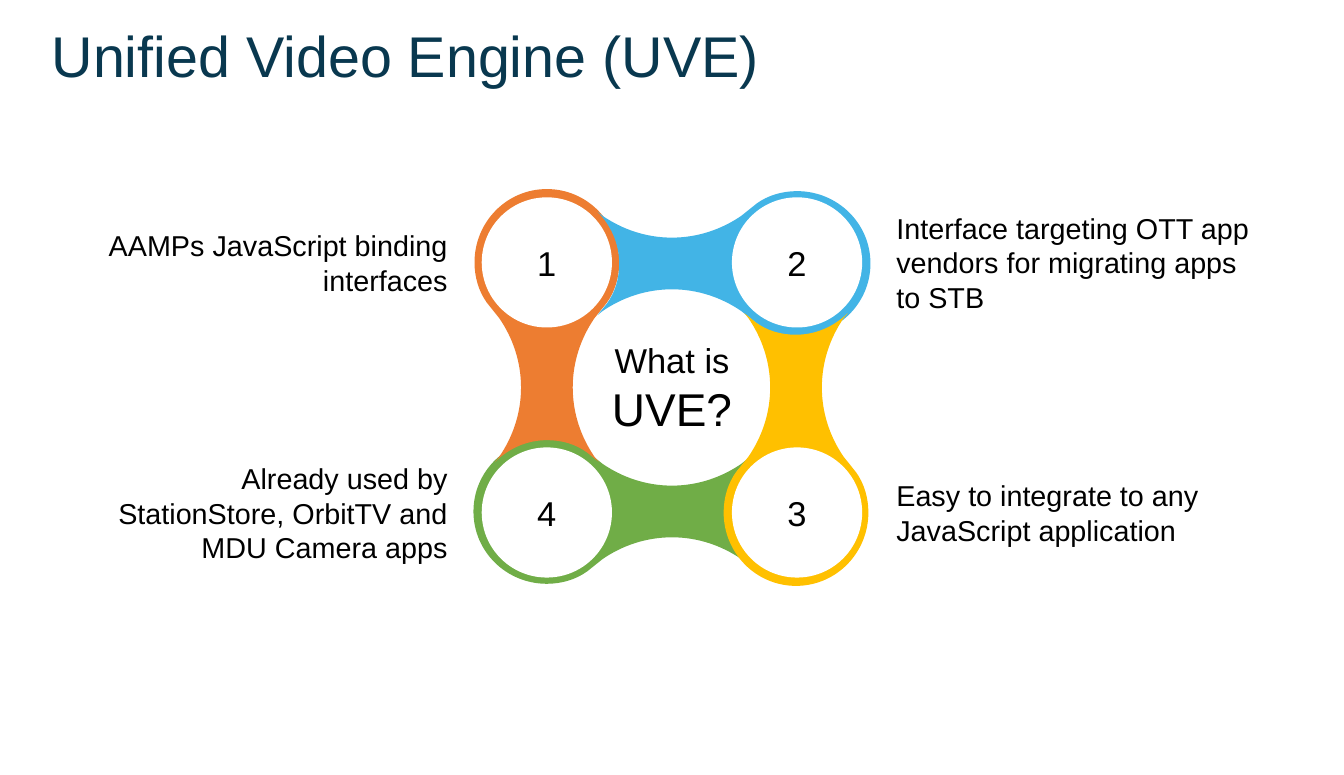
from lxml import etree
from pptx import Presentation
from pptx.dml.color import RGBColor
from pptx.enum.shapes import MSO_SHAPE as SHAPE
from pptx.enum.text import MSO_ANCHOR as ANCHOR, MSO_AUTO_SIZE as FIT, PP_ALIGN as ALIGN
from pptx.oxml.ns import qn
from pptx.util import Pt

# Content
TITLE = "Unified Video Engine (UVE)"
QUESTION = [("What is", 24), ("UVE?", 32)]
# number, link colour, horizontal and vertical side of the hub, caption lines, caption height
NODES = [
    ("4", "green", -1, 1, ["Already used by StationStore, OrbitTV and MDU Camera apps"], 101),
    ("1", "orange", -1, -1, ["AAMPs JavaScript binding interfaces"], 67),
    ("2", "blue", 1, -1, ["Interface targeting OTT app vendors for migrating apps", "to STB"], 101),
    ("3", "yellow", 1, 1, ["Easy to integrate to any JavaScript application"], 67),
]
COLORS = {
    "green": "70AD47", "orange": "ED7D31", "blue": "42B4E6", "yellow": "FFC000",
    "white": "FFFFFF", "black": "000000", "title": "09384F",
}

# Layout in px, 100 to the inch
PX = 9144
WIDTH, HEIGHT = 1300, 750
CENTER = (650, 375)
NODE_OFFSET, DISC = 121, 126
CAPTION_GAP, CAPTION_WIDTH = 217, 359
LINK_SHIFT = {"orange": -1}

# One link around the hub centre: one point is a corner, three points a Bezier curve
LINK_START = (-121, 50)
LINK = [
    [(-107, 50), (-93, 54), (-82, 62)], [(-72, 70)], [(-67, 74)],
    [(-48, 87), (-25, 95), (0, 95)], [(25, 95), (48, 87), (67, 74)], [(72, 70)], [(63, 81)],
    [(55, 92), (51, 105), (51, 120)], [(51, 139), (59, 157), (72, 170)], [(67, 166)],
    [(48, 153), (25, 145), (0, 145)], [(-25, 145), (-48, 153), (-67, 166)],
    [(-72, 170)], [(-82, 178)],
    [(-93, 186), (-107, 190), (-121, 190)], [(-160, 190), (-192, 159), (-192, 120)],
    [(-192, 81), (-160, 50), (-121, 50)],
]


def color(name):
    return RGBColor.from_string(COLORS[name])


def paint(shape, fill):
    shape.shadow.inherit = False
    shape.fill.solid()
    shape.fill.fore_color.rgb = color(fill)
    shape.line.fill.background()


def write(shape, lines, ink="black", align=ALIGN.LEFT, insets=(0, 0, 0, 0), fit=FIT.NONE):
    frame = shape.text_frame
    settings = {"word_wrap": True, "auto_size": fit, "vertical_anchor": ANCHOR.MIDDLE}
    sides = ("margin_left", "margin_top", "margin_right", "margin_bottom")
    settings.update(zip(sides, (inset * PX for inset in insets)))
    for name, value in settings.items():
        setattr(frame, name, value)
    para = frame.paragraphs[0]
    para.alignment = align
    for index, (text, size) in enumerate(lines):
        if index:
            para.add_line_break()
        span = para.add_run()
        span.text = text
        span.font.name, span.font.size = "Arial", Pt(size)
        span.font.color.rgb = color(ink)
    return para


def place(x, y, width, height):
    return [round(value * PX) for value in (x, y, width, height)]


def centered(x, y, width, height):
    return place(x - width / 2, y - height / 2, width, height)


def add_link(shapes, turns, shift):
    points = [LINK_START] + [point for step in LINK for point in step]
    for _ in range(turns):
        points = [(-y, x) for x, y in points]
    points = [(CENTER[0] + shift + x, CENTER[1] + y) for x, y in points]
    builder = shapes.build_freeform(*points[0], scale=PX)
    builder.add_line_segments(points[1:], close=True)
    link = builder.convert_to_shape()
    # Join each run of three points into one curve
    segments = iter(list(link.element.iter(qn("a:lnTo"))))
    for step in LINK:
        group = [next(segments) for _ in step]
        if len(group) == 3:
            curve = etree.Element(qn("a:cubicBezTo"))
            group[0].addprevious(curve)
            for segment in group:
                curve.append(segment[0])
                segment.getparent().remove(segment)
    return link


deck = Presentation()
deck.slide_width, deck.slide_height = WIDTH * PX, HEIGHT * PX
page = deck.slides.add_slide(deck.slide_layouts[6])
shapes = page.shapes

# Title
title = shapes.add_textbox(*place(0, 0, WIDTH, 100))
write(title, [(TITLE, 40)], ink="title", insets=(50, 15, 0, 0)).line_spacing = 0.9

# Links, each a quarter turn on from the one before
for turns, (_, link_color, *_) in enumerate(NODES):
    paint(add_link(shapes, turns, LINK_SHIFT.get(link_color, 0)), link_color)

# Numbered discs and their captions
for number, _, across, down, caption, height in NODES:
    y = CENTER[1] + down * NODE_OFFSET
    disc = shapes.add_shape(
        SHAPE.OVAL, *centered(CENTER[0] + across * NODE_OFFSET, y, DISC, DISC))
    paint(disc, "white")
    write(disc, [(number, 24)], align=ALIGN.CENTER, insets=(10, 5, 10, 5))

    caption_x = CENTER[0] + across * (CAPTION_GAP + CAPTION_WIDTH / 2)
    label = shapes.add_shape(
        SHAPE.RECTANGLE, *centered(caption_x, y, CAPTION_WIDTH, height))
    paint(label, "white")
    write(label, [(line, 20) for line in caption],
          align=ALIGN.RIGHT if across < 0 else ALIGN.LEFT, fit=FIT.SHAPE_TO_FIT_TEXT)

# Question in the hub
question = shapes.add_textbox(*centered(*CENTER, 195, 94))
write(question, QUESTION, align=ALIGN.CENTER, fit=FIT.SHAPE_TO_FIT_TEXT)

deck.save("out.pptx")
